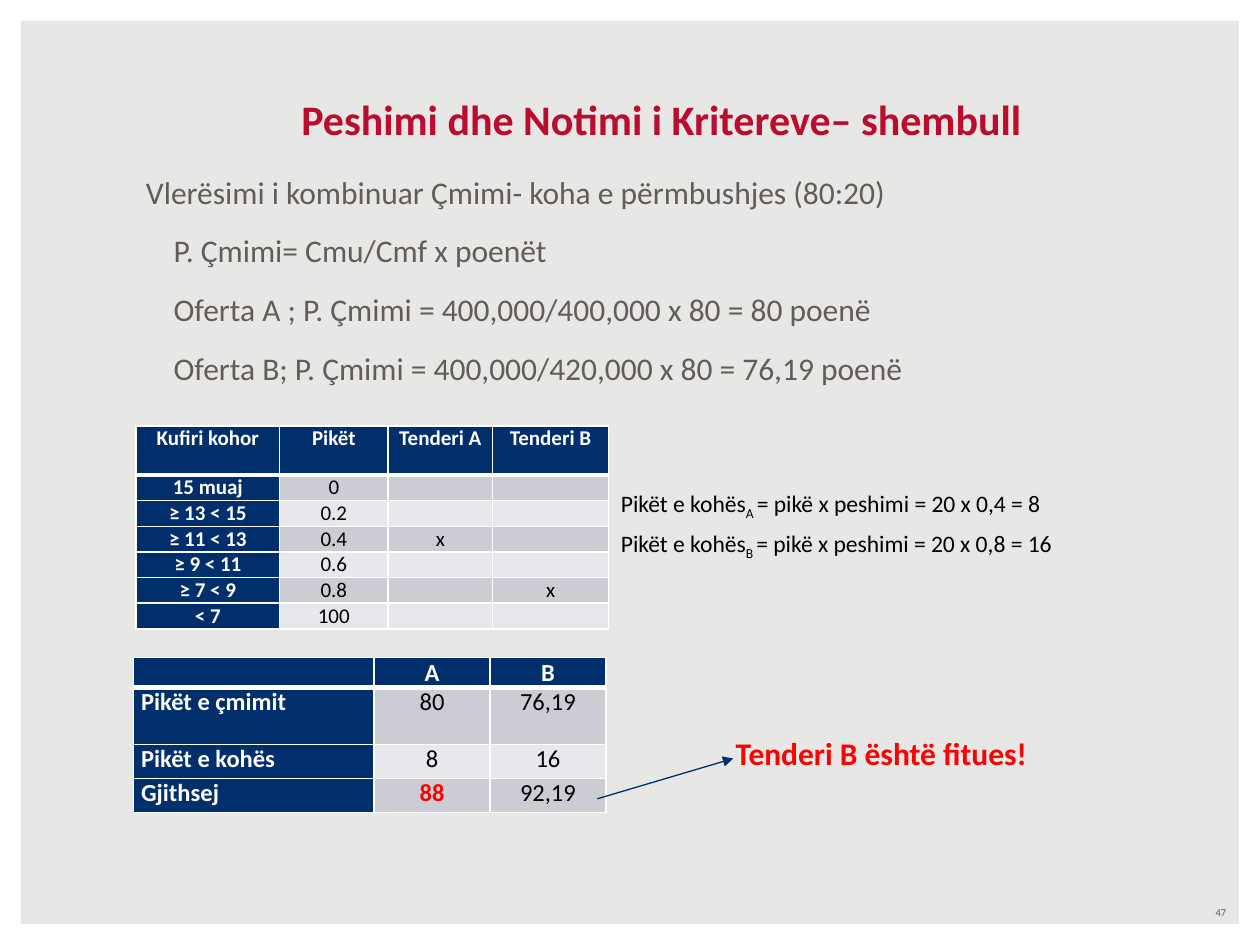
from dataclasses import dataclass

from lxml.etree import SubElement
from pptx import Presentation
from pptx.dml.color import RGBColor
from pptx.enum.shapes import MSO_CONNECTOR, MSO_SHAPE
from pptx.enum.text import MSO_ANCHOR, PP_ALIGN
from pptx.oxml.ns import qn
from pptx.util import Inches, Pt

FONT = "Calibri"
NAVY = RGBColor(0x00, 0x2F, 0x6C)
WHITE = RGBColor(0xFF, 0xFF, 0xFF)
BLACK = RGBColor(0x00, 0x00, 0x00)
RED = RGBColor(0xFF, 0x00, 0x00)
WINE = RGBColor(0xBA, 0x0C, 0x2F)
GRAY = RGBColor(0x63, 0x5C, 0x5B)
PAPER = RGBColor(0xE7, 0xE7, 0xE5)
BANDS = (RGBColor(0xCC, 0xCD, 0xD4), RGBColor(0xE7, 0xE8, 0xEB))


@dataclass
class Line:
    text: str
    sub: str = ""
    rest: str = ""
    indent: float = 0


@dataclass
class Label:
    box: tuple[float, float, float, float]
    lines: list[Line]
    size: float
    color: RGBColor
    bold: bool = False
    align: PP_ALIGN = PP_ALIGN.LEFT
    anchor: MSO_ANCHOR = MSO_ANCHOR.TOP
    before: float = 0
    after: float = 0


@dataclass
class Grid:
    box: tuple[float, float, float, float]
    cols: list[float]
    rows: list[float]
    cells: list[list[str]]
    size: float
    side: PP_ALIGN
    mark: tuple[int, int] | None = None


LABELS = [
    Label((1.25, 0.5, 8, 0.69), [Line("Peshimi dhe Notimi i Kritereve– shembull")],
          24, WINE, True, PP_ALIGN.CENTER, MSO_ANCHOR.BOTTOM),
    Label((1.06, 1.32, 7.69, 1.95), [
        Line("Vlerësimi i kombinuar Çmimi- koha e përmbushjes (80:20)"),
        Line("P. Çmimi= Cmu/Cmf x poenët", indent=0.22),
        Line("Oferta A ; P. Çmimi = 400,000/400,000 x 80 = 80 poenë", indent=0.22),
        Line("Oferta B; P. Çmimi = 400,000/420,000 x 80 = 76,19 poenë", indent=0.22),
    ], 18, GRAY, after=12),
    Label((7.5, 7.14, 2.33, 0.2), [Line("47")], 6, GRAY,
          align=PP_ALIGN.RIGHT, anchor=MSO_ANCHOR.MIDDLE),
    Label((5.74, 5.78, 2.68, 0.4), [Line("Tenderi B është fitues!")],
          18, RED, True, before=4.5),
    Label((4.83, 3.83, 4.31, 0.63), [
        Line("Pikët e kohës", "A ", "= pikë x peshimi = 20 x 0,4 = 8"),
        Line("Pikët e kohës", "B ", "= pikë x peshimi = 20 x 0,8 = 16"),
    ], 13.5, BLACK, before=4.5),
]

GRIDS = [
    Grid((1.08, 3.38, 3.75, 1.6), [1.14, 0.86, 0.83, 0.92], [0.39] + [0.2] * 6, [
        ["Kufiri kohor", "Pikët", "Tenderi A", "Tenderi B"],
        ["15 muaj", "0", "", ""],
        ["≥ 13 < 15", "0.2", "", ""],
        ["≥ 11 < 13", "0.4", "x", ""],
        ["≥ 9 < 11", "0.6", "", ""],
        ["≥ 7 < 9", "0.8", "", "x"],
        ["< 7", "100", "", ""],
    ], 12, PP_ALIGN.CENTER),
    Grid((1.06, 5.22, 3.75, 1.23), [1.91, 0.92, 0.92], [0.23, 0.45, 0.27, 0.27], [
        ["", "A", "B"],
        ["Pikët e çmimit", "80", "76,19"],
        ["Pikët e kohës", "8", "16"],
        ["Gjithsej", "88", "92,19"],
    ], 14, PP_ALIGN.LEFT, (3, 1)),
]


def style(para, size: float, color: RGBColor, bold: bool, align: PP_ALIGN) -> None:
    para.alignment = align
    font = para.font
    font.name, font.size, font.bold = FONT, Pt(size), bold
    font.color.rgb = color


def write(slide, label: Label) -> None:
    frame = slide.shapes.add_textbox(*map(Inches, label.box)).text_frame
    frame.word_wrap = True
    frame.vertical_anchor = label.anchor
    for i, line in enumerate(label.lines):
        para = frame.add_paragraph() if i else frame.paragraphs[0]
        style(para, label.size, label.color, label.bold, label.align)
        para.space_before, para.space_after = Pt(label.before), Pt(label.after)
        if line.indent:
            props = para._p.get_or_add_pPr()
            props.set("marL", str(Inches(line.indent)))
            props.set("indent", "0")
        para.add_run().text = line.text
        if line.sub:
            low = para.add_run()
            low.text = line.sub
            low.font._element.set("baseline", "-25000")
            para.add_run().text = line.rest


def edge(cell, row: int) -> None:
    props = cell._tc.get_or_add_tcPr()
    for name in ("lnL", "lnR", "lnT", "lnB"):
        thick = (row, name) in ((0, "lnB"), (1, "lnT"))
        line = SubElement(props, qn(f"a:{name}"), w=str(Pt(3 if thick else 1)))
        fill = SubElement(line, qn("a:solidFill"))
        SubElement(fill, qn("a:srgbClr"), val=str(WHITE))


def tabulate(slide, grid: Grid) -> None:
    table = slide.shapes.add_table(
        len(grid.rows), len(grid.cols), *map(Inches, grid.box)).table
    table.first_row = table.horz_banding = False
    for col, width in zip(table.columns, grid.cols):
        col.width = Inches(width)
    for r, (height, texts) in enumerate(zip(grid.rows, grid.cells)):
        table.rows[r].height = Inches(height)
        for c, text in enumerate(texts):
            cell = table.cell(r, c)
            head = r == 0 or c == 0
            mark = (r, c) == grid.mark
            cell.margin_left = cell.margin_right = Inches(0.06)
            cell.margin_top = cell.margin_bottom = 0
            edge(cell, r)
            cell.fill.solid()
            cell.fill.fore_color.rgb = NAVY if head else BANDS[(r - 1) % 2]
            cell.text = text
            color = WHITE if head else RED if mark else BLACK
            align = grid.side if c == 0 else PP_ALIGN.CENTER
            style(cell.text_frame.paragraphs[0], grid.size, color, head or mark, align)


def border(slide, deck) -> None:
    frame = slide.shapes.add_shape(
        MSO_SHAPE.FRAME, 0, 0, deck.slide_width, deck.slide_height)
    frame.adjustments[0] = 0.022
    frame.shadow.inherit = False
    frame.fill.solid()
    frame.fill.fore_color.rgb = WHITE
    frame.line.fill.background()


def arrow(slide, start: tuple[float, float], end: tuple[float, float]) -> None:
    link = slide.shapes.add_connector(
        MSO_CONNECTOR.STRAIGHT, *map(Inches, start + end))
    link.line.color.rgb = NAVY
    link.line.width = Pt(0.75)
    SubElement(link.line._get_or_add_ln(), qn("a:tailEnd"), type="triangle")
    SubElement(link._element.spPr, qn("a:effectLst"))


def main() -> None:
    """Build the slide on weighting and scoring tender criteria."""
    deck = Presentation()
    deck.slide_width, deck.slide_height = Inches(10), Inches(7.5)
    slide = deck.slides.add_slide(deck.slide_layouts[6])
    slide.background.fill.solid()
    slide.background.fill.fore_color.rgb = PAPER
    border(slide, deck)
    for grid in GRIDS:
        tabulate(slide, grid)
    arrow(slide, (4.74, 6.34), (5.82, 6.02))
    for label in LABELS:
        write(slide, label)
    deck.save("out.pptx")


if __name__ == "__main__":
    main()
